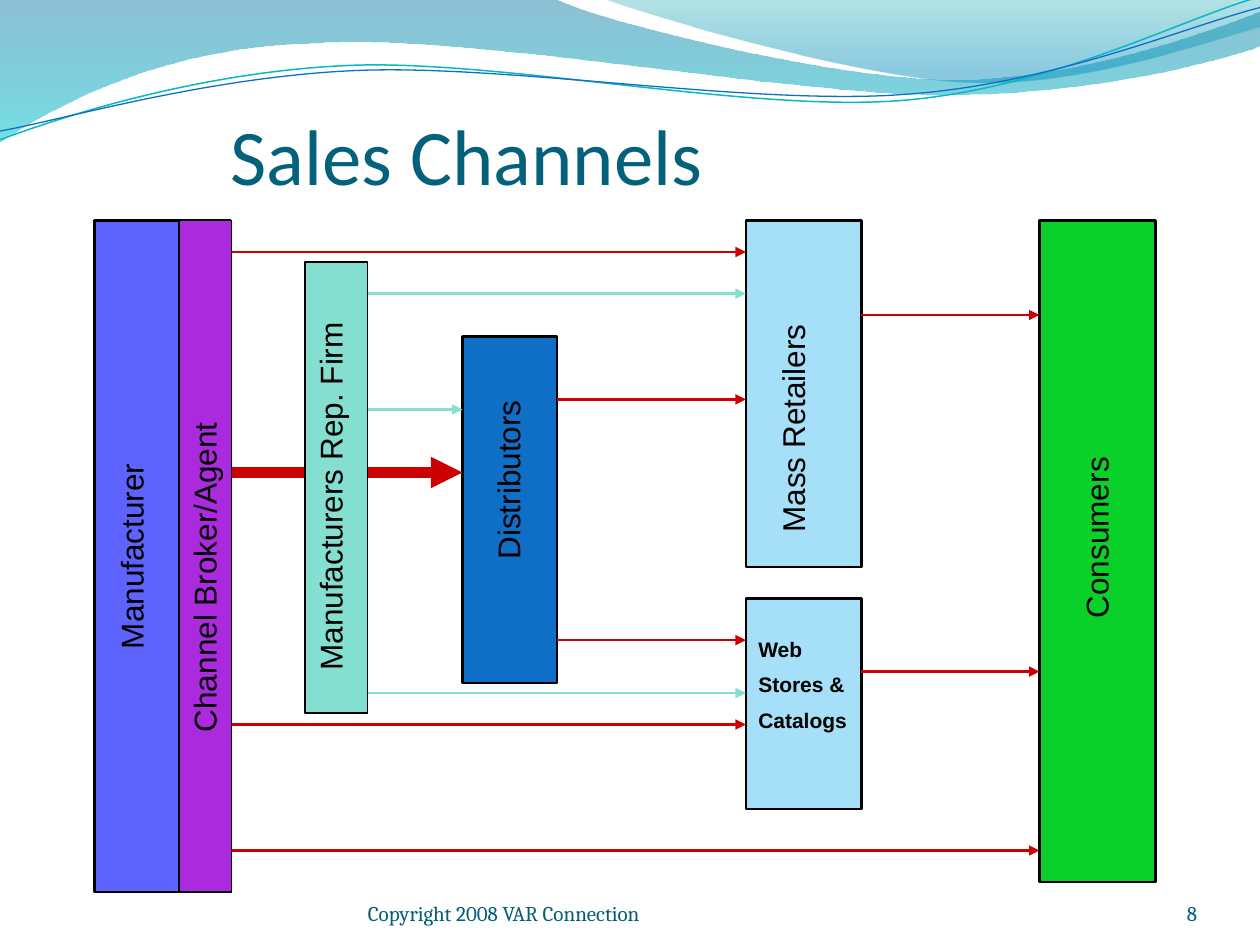
from itertools import chain

from lxml import etree
from pptx import Presentation
from pptx import util as u
from pptx.dml.color import RGBColor
from pptx.enum import shapes, text
from pptx.oxml import ns

COLORS = {
    "title": "04617B", "footer": "045D75", "black": "000000",
    "manufacturer": "5F63FD", "agent": "AB2ADE", "rep": "85DFD0",
    "distributor": "0F6FC6", "retail": "A6DFF8", "consumer": "09D12A",
    "direct": "CC0000", "teal_line": "0AB8BF", "blue_line": "0F6FC6",
    "deep_blue": "0074A1", "cyan": "00C6CF", "sea": "00A1A9", "sky": "008BBF",
}
LEFT, RIGHT = text.PP_ALIGN.LEFT, text.PP_ALIGN.RIGHT
TOP, MIDDLE, BOTTOM = (text.MSO_ANCHOR.TOP, text.MSO_ANCHOR.MIDDLE,
                       text.MSO_ANCHOR.BOTTOM)
INSETS = ("margin_left", "margin_top", "margin_right", "margin_bottom")

LARGE_WAVE = [
    [(0, 0)], [(4.4, -0.01)],
    [(4.76, 0.17), (6.64, 0.63), (7.58, 0.63)],
    [(8.53, 0.63), (9.58, 0.26), (10, 0.09)], [(10.01, 0.36)],
    [(9.83, 0.44), (8.7, 0.76), (7.46, 0.75)],
    [(6.22, 0.75), (3.82, 0.28), (2.57, 0.34)],
    [(1.29, 0.36), (0.46, 0.83), (-0.01, 1.13)], [(0, 0)],
]
SMALL_WAVE = [
    [(4.79, -0.01)], [(5.09, 0.11), (6.82, 0.62), (7.69, 0.65)],
    [(8.56, 0.69), (9.61, 0.32), (10, 0.21)], [(10, 0)], [(4.79, -0.01)],
]
TEAL_RIPPLE = [
    [(0, 1.11)], [(0.48, 0.93), (1.58, 0.57), (2.77, 0.52)],
    [(3.95, 0.47), (5.93, 0.89), (7.13, 0.8)],
    [(8.33, 0.71), (9.38, 0.15), (9.98, -0.02)],
]
BLUE_RIPPLE = [
    [(0, 1.04)], [(0.47, 0.96), (1.64, 0.61), (2.83, 0.56)],
    [(4.03, 0.51), (5.97, 0.84), (7.17, 0.75)],
    [(8.36, 0.67), (9.41, 0.21), (10, 0.06)],
]


def rgb(name):
    """Return the named colour."""
    return RGBColor.from_string(COLORS[name])


def apply(target, values):
    """Set each attribute of the target from a dict."""
    for name, value in values.items():
        setattr(target, name, value)


def bend(outline, segments):
    """Merge the lines of each three-point segment into one cubic curve."""
    lines = iter(list(outline._element.iter(ns.qn("a:lnTo"))))
    for segment in segments[1:]:
        first, *others = [next(lines) for _ in segment]
        if others:
            first.tag = ns.qn("a:cubicBezTo")
        for line in others:
            first.append(line[0])
            line.getparent().remove(line)


def add_outline(slide, segments, close):
    """Draw a curved outline without shadow."""
    start, *rest = [(u.Inches(x), u.Inches(y))
                    for x, y in chain.from_iterable(segments)]
    builder = slide.shapes.build_freeform(*start, scale=1.0)
    builder.add_line_segments(rest, close=close)
    outline = builder.convert_to_shape()
    bend(outline, segments)
    outline.shadow.inherit = False
    return outline


def add_wave(slide, segments, stops):
    """Add a wave with a translucent downward gradient."""
    wave = add_outline(slide, segments, True)
    wave.line.fill.background()
    wave.fill.gradient()
    wave.fill.gradient_angle = 270
    for stop, (position, color, _) in zip(wave.fill.gradient_stops, stops):
        stop.position = position
        stop.color.rgb = rgb(color)
    for element, (_, _, opacity) in zip(
            wave._element.spPr.iter(ns.qn("a:srgbClr")), stops):
        etree.SubElement(element, ns.qn("a:alpha"), val=str(opacity * 1000))


def add_ripple(slide, segments, color, width):
    """Add a thin curved line."""
    ripple = add_outline(slide, segments, False)
    ripple.fill.background()
    ripple.line.color.rgb = rgb(color)
    ripple.line.width = u.Pt(width)


def write(box, lines, size, font, color, bold=False, align=LEFT, anchor=TOP,
          insets=(0.1, 0.05, 0.1, 0.05), gap=6):
    """Fill a box with formatted paragraphs."""
    frame = box.text_frame
    apply(frame, {"word_wrap": True, "vertical_anchor": anchor,
                  "auto_size": text.MSO_AUTO_SIZE.NONE,
                  **dict(zip(INSETS, map(u.Inches, insets)))})
    frame.text = "\n".join(lines)
    for index, paragraph in enumerate(frame.paragraphs):
        paragraph.alignment = align
        if index:
            paragraph.space_before = u.Pt(gap)
        apply(paragraph.font, {"size": u.Pt(size), "name": font, "bold": bold})
        paragraph.font.color.rgb = rgb(color)


def add_text(slide, place, lines, size, font, color, **options):
    """Add a text box."""
    box = slide.shapes.add_textbox(*map(u.Inches, place))
    write(box, lines, size, font, color, **options)
    return box


def add_bar(slide, place, color, border=1.5):
    """Add a bar for one party of the sales channel."""
    bar = slide.shapes.add_shape(shapes.MSO_SHAPE.RECTANGLE, *map(u.Inches, place))
    bar.shadow.inherit = False
    bar.fill.solid()
    bar.fill.fore_color.rgb = rgb(color)
    bar.line.color.rgb = rgb("black")
    bar.line.width = u.Pt(border)


def add_label(slide, center_x, center_y, length, caption, anchor=TOP):
    """Add a label that reads upwards around its centre."""
    place = center_x - length / 2, center_y - 0.2, length, 0.4
    add_text(slide, place, [caption], 18, "Arial", "black",
             anchor=anchor).rotation = 270


def add_flow(slide, start, end, y, color, width=1.5):
    """Add a horizontal arrow between two parties."""
    flow = slide.shapes.add_connector(
        shapes.MSO_CONNECTOR.STRAIGHT, *map(u.Inches, (start, y, end, y)))
    flow.line.color.rgb = rgb(color)
    flow.line.width = u.Pt(width)
    etree.SubElement(flow.line._get_or_add_ln(), ns.qn("a:tailEnd"), type="triangle")
    etree.SubElement(flow._element.spPr, ns.qn("a:effectLst"))


def main():
    """Build the sales channels slide."""
    deck = Presentation()
    apply(deck, {"slide_width": u.Inches(10), "slide_height": u.Inches(7.5)})
    slide = deck.slides.add_slide(deck.slide_layouts[5])

    add_wave(slide, LARGE_WAVE, [(0, "deep_blue", 45), (1, "cyan", 55)])
    add_wave(slide, SMALL_WAVE, [(0, "sea", 30), (0.8, "sky", 45)])
    add_ripple(slide, TEAL_RIPPLE, "teal_line", 0.85)
    add_ripple(slide, BLUE_RIPPLE, "blue_line", 0.75)

    title = slide.shapes.title
    apply(title, dict(zip(("left", "top", "width", "height"),
                          map(u.Inches, (1.83, 0.83, 7.75, 0.77)))))
    write(title, ["Sales Channels"], 45, "Calibri", "title", anchor=BOTTOM,
          insets=(0, 0.05, 0, 0))
    for left, width, words, align in (
            (2.92, 3.67, "Copyright 2008 VAR Connection", LEFT),
            (8.67, 0.83, "8", RIGHT)):
        add_text(slide, (left, 6.95, width, 0.4), [words], 12, "Cambria",
                 "footer", align=align, anchor=BOTTOM, insets=(0, 0, 0, 0))

    add_bar(slide, (0.75, 1.75, 1.08, 5.33), "manufacturer")
    add_label(slide, 1.04, 4.04, 2.42, "Manufacturer", MIDDLE)
    add_bar(slide, (3.67, 2.67, 0.75, 2.75), "distributor")
    add_label(slide, 4.03, 3.75, 1.58, "Distributors")
    add_bar(slide, (5.92, 1.75, 0.92, 2.75), "retail")
    add_label(slide, 6.29, 3.2, 2.25, "Mass Retailers")
    add_bar(slide, (8.25, 1.75, 0.92, 5.25), "consumer")
    add_label(slide, 8.7, 4.17, 1.67, "Consumers")
    add_bar(slide, (5.92, 4.75, 0.92, 1.67), "retail")
    add_text(slide, (5.92, 5, 0.92, 1.2), ["Web", "Stores &", "Catalogs"],
             12, "Arial", "black", bold=True)

    for start, end, y in ((1.83, 5.92, 2), (1.83, 5.92, 5.75),
                          (4.42, 5.92, 3.17), (4.42, 5.92, 5.08),
                          (1.83, 8.25, 6.75), (6.83, 8.25, 2.5),
                          (6.83, 8.25, 5.33)):
        add_flow(slide, start, end, y, "direct")
    add_flow(slide, 1.83, 3.67, 3.75, "direct", 6)

    add_bar(slide, (1.42, 1.75, 0.42, 5.33), "agent", 0.75)
    add_label(slide, 1.62, 4.12, 3.58, "Channel Broker/Agent")
    add_bar(slide, (2.42, 2.08, 0.5, 3.58), "rep", 0.75)
    add_label(slide, 2.62, 3.92, 3, "Manufacturers Rep. Firm")
    for end, y in ((5.92, 2.33), (5.92, 5.5), (3.67, 3.25)):
        add_flow(slide, 2.92, end, y, "rep")

    deck.save("out.pptx")


if __name__ == "__main__":
    main()
